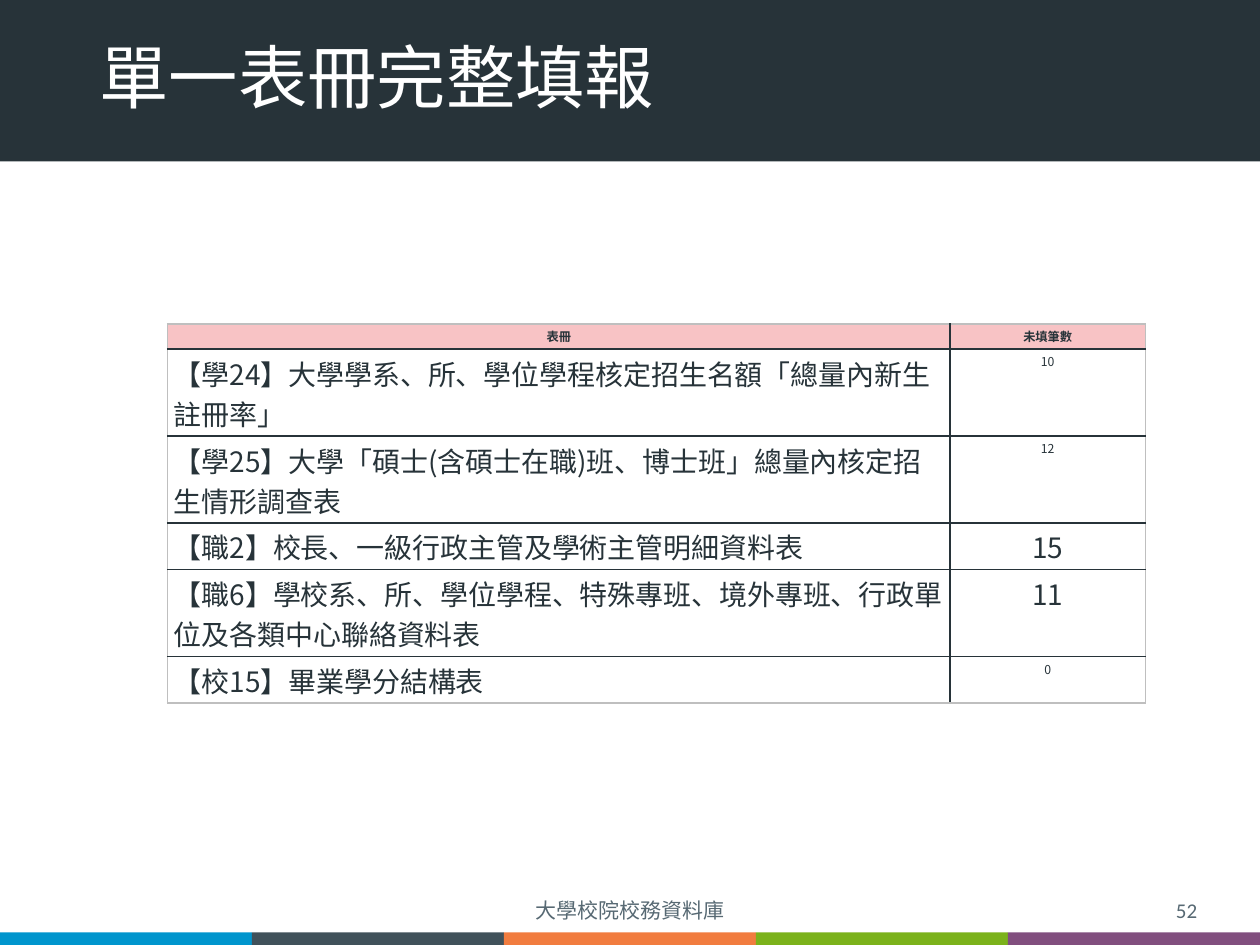
import pptx
import pptx.util
import pptx.dml.color
import pptx.enum.shapes
import pptx.enum.text
import pptx.oxml
import pptx.oxml.ns
import lxml.etree

Inches = pptx.util.Inches
Pt = pptx.util.Pt
ALIGN = pptx.enum.text.PP_ALIGN
qn = pptx.oxml.ns.qn

TITLE = "單一表冊完整填報"
FOOTERS = [
    ("大學校院校務資料庫", 3.31, 3.38, ALIGN.CENTER),
    ("52", 7.35, 2.25, ALIGN.RIGHT),
]
HEADERS = ["表冊", "未填筆數"]
HEADER_HEIGHT, ONE_LINE, TWO_LINES = 0.2, 0.37, 0.69
ROWS = [
    ("【學24】大學學系、所、學位學程核定招生名額「總量內新生註冊率」", "10", 7, TWO_LINES),
    ("【學25】大學「碩士(含碩士在職)班、博士班」總量內核定招生情形調查表", "12", 7, TWO_LINES),
    ("【職2】校長、一級行政主管及學術主管明細資料表", "15", 16, ONE_LINE),
    ("【職6】學校系、所、學位學程、特殊專班、境外專班、行政單位及各類中心聯絡資料表", "11", 16, TWO_LINES),
    ("【校15】畢業學分結構表", "0", 7, ONE_LINE),
]
COLUMN_WIDTHS = [6.21, 1.55]
COLORS = {
    "dark": "273339", "white": "FFFFFF", "footer": "576973",
    "header": "F8C3C5", "edge": "BFBFBF",
}
STRIPES = ["0095CD", "40515A", "F17C3F", "7BB21B", "814E7E"]
LATIN, CJK = "Calibri", "Noto Sans CJK SC"


def rgb(value):
    return pptx.dml.color.RGBColor.from_string(value)


def add_bar(page, left, top, width, height, color):
    bar = page.shapes.add_shape(
        pptx.enum.shapes.MSO_SHAPE.RECTANGLE,
        Inches(left), Inches(top), Inches(width), Inches(height))
    bar.shadow.inherit = False
    bar.fill.solid()
    bar.fill.fore_color.rgb = rgb(color)
    bar.line.fill.background()


def write(frame, text, size, color, align, font=LATIN, bold=False):
    para = frame.paragraphs[0]
    para.alignment = align
    span = para.add_run()
    span.text = text
    span.font.size = Pt(size)
    span.font.bold = bold
    span.font.name = font
    span.font.color.rgb = rgb(color)
    east = lxml.etree.Element(qn("a:ea"), typeface=CJK)
    span.font._element.find(qn("a:latin")).addnext(east)
    return para


def set_borders(cell, colors):
    properties = cell._tc.get_or_add_tcPr()
    for index, (side, color) in enumerate(colors.items()):
        line = lxml.etree.Element(qn("a:" + side), w=str(Pt(1)))
        fill = lxml.etree.SubElement(line, qn("a:solidFill"))
        lxml.etree.SubElement(fill, qn("a:srgbClr"), val=color)
        properties.insert(index, line)


def add_title(page):
    title = page.shapes.title
    title.left, title.top = Inches(0.69), Inches(0.27)
    title.width, title.height = Inches(8.62), Inches(0.74)
    title.text_frame.vertical_anchor = pptx.enum.text.MSO_ANCHOR.MIDDLE
    para = write(title.text_frame, TITLE, 39.6, COLORS["white"], ALIGN.LEFT)
    para.line_spacing = 0.9
    page.shapes._spTree.append(title._element)


def add_footer(page, text, left, width, align):
    box = page.shapes.add_textbox(Inches(left), Inches(7.07), Inches(width), Inches(0.31))
    box.text_frame.word_wrap = True
    box.text_frame.vertical_anchor = pptx.enum.text.MSO_ANCHOR.MIDDLE
    write(box.text_frame, text, 12, COLORS["footer"], align)


def add_report_table(page):
    heights = [HEADER_HEIGHT] + [row[3] for row in ROWS]
    table = page.shapes.add_table(
        len(heights), len(COLUMN_WIDTHS), Inches(1.33), Inches(2.57),
        Inches(sum(COLUMN_WIDTHS)), Inches(sum(heights))).table
    table.horz_banding = False
    for column, width in zip(table.columns, COLUMN_WIDTHS):
        column.width = Inches(width)
    for row, height in zip(table.rows, heights):
        row.height = Inches(height)

    content = [[(text, 7, ALIGN.CENTER) for text in HEADERS]]
    content += [[(name, 16, ALIGN.LEFT), (count, size, ALIGN.CENTER)]
                for name, count, size, height in ROWS]
    last_row, last_column = len(heights) - 1, len(COLUMN_WIDTHS) - 1
    for r, row in enumerate(content):
        for c, (text, size, align) in enumerate(row):
            cell = table.cell(r, c)
            cell.margin_left = cell.margin_right = Inches(0.05)
            cell.margin_top = cell.margin_bottom = Inches(0.03)
            if r == 0:
                cell.fill.solid()
                cell.fill.fore_color.rgb = rgb(COLORS["header"])
            else:
                cell.fill.background()
            write(cell.text_frame, text, size, COLORS["dark"], align, CJK, r == 0)
            outer = {"lnL": c == 0, "lnR": c == last_column,
                     "lnT": r == 0, "lnB": r == last_row}
            set_borders(cell, {side: COLORS["edge" if edge else "dark"]
                               for side, edge in outer.items()})


def main():
    deck = pptx.Presentation()
    deck.slide_width, deck.slide_height = Inches(10), Inches(7.5)
    page = deck.slides.add_slide(deck.slide_layouts[5])
    add_bar(page, 0, -0.01, 10, 1.29, COLORS["dark"])
    stripe_width = 10 / len(STRIPES)
    for index, color in enumerate(STRIPES):
        add_bar(page, index * stripe_width, 7.4, stripe_width, 0.1, color)
    add_title(page)
    for footer in FOOTERS:
        add_footer(page, *footer)
    add_report_table(page)
    deck.save("out.pptx")


if __name__ == "__main__":
    main()
